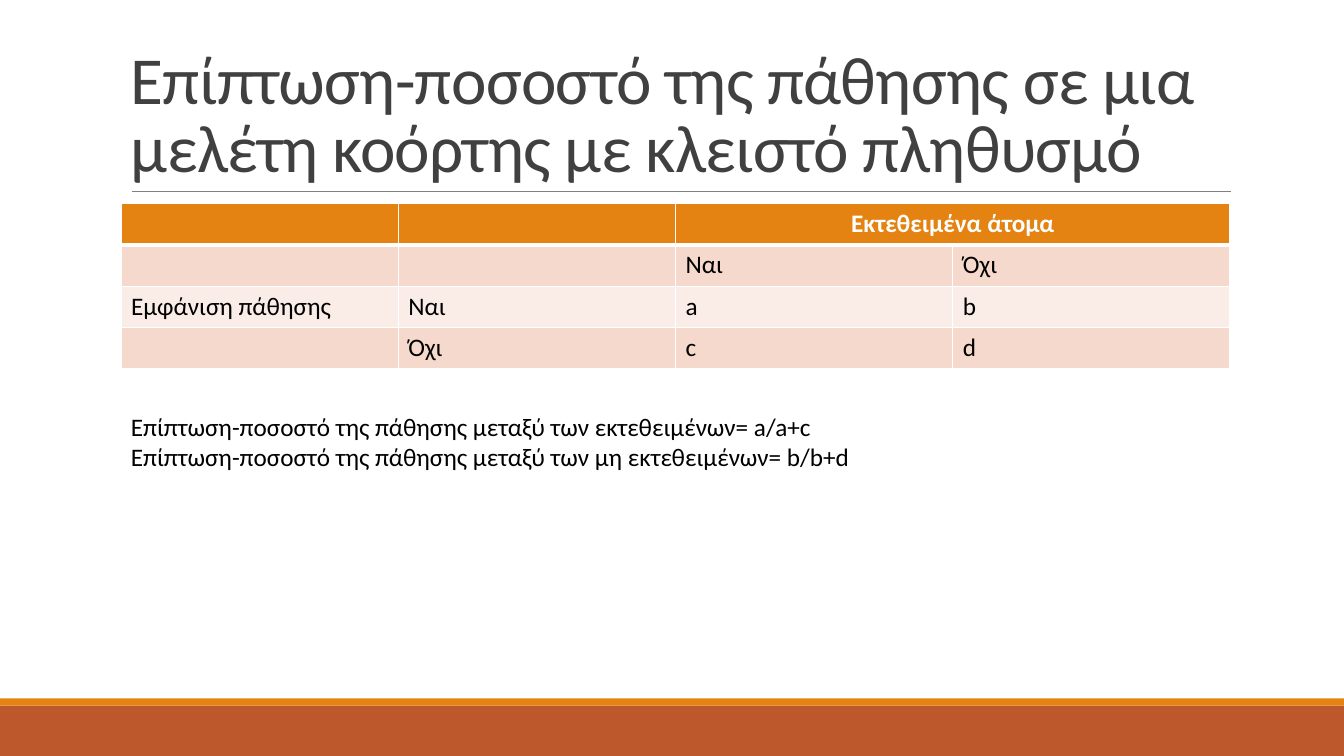
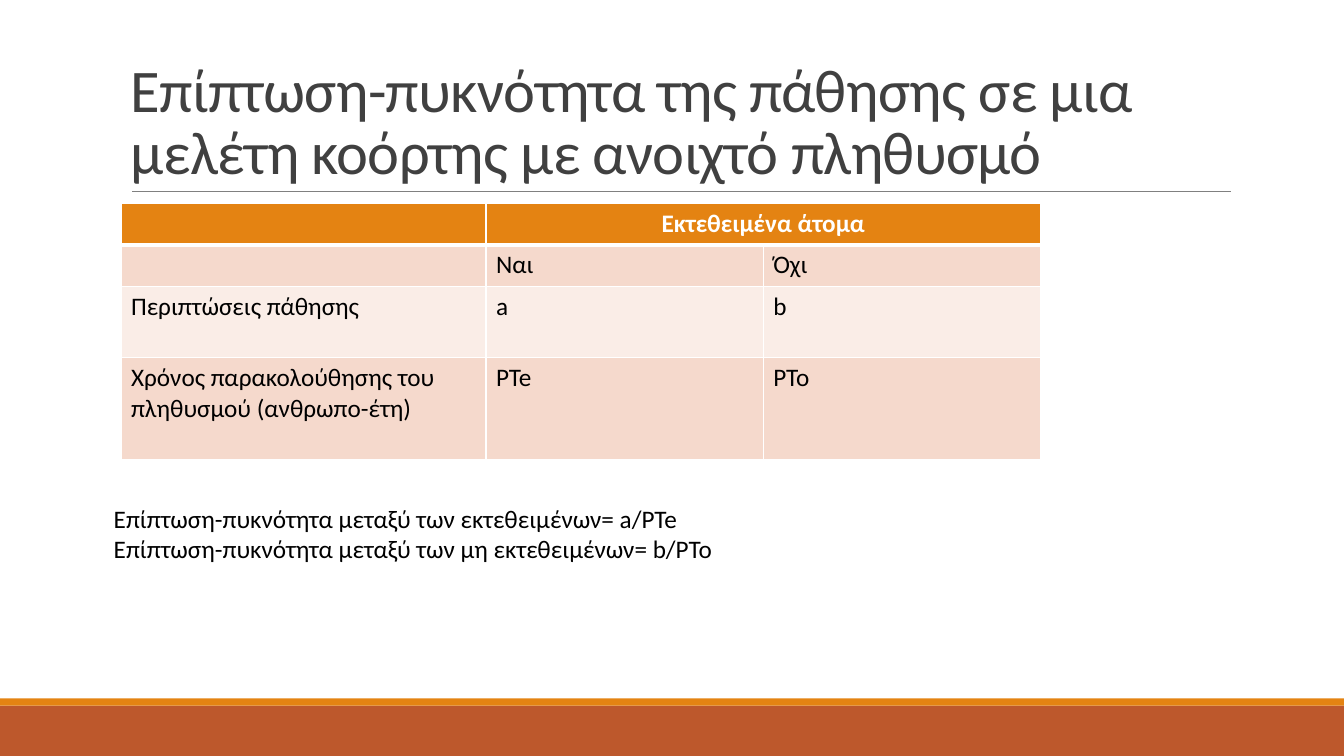
import pptx
import pptx.util
import pptx.dml.color
import pptx.enum.shapes
import pptx.enum.text
from lxml import etree
from pptx.oxml.ns import qn

Inches = pptx.util.Inches
Pt = pptx.util.Pt
RGBColor = pptx.dml.color.RGBColor
PP_ALIGN = pptx.enum.text.PP_ALIGN
MSO_ANCHOR = pptx.enum.text.MSO_ANCHOR

RUST = RGBColor(0xBD, 0x58, 0x2C)
ORANGE = RGBColor(0xE4, 0x83, 0x12)
ROW_DARK = RGBColor(0xF5, 0xD9, 0xCC)
ROW_LIGHT = RGBColor(0xFA, 0xED, 0xE7)
RULE_GREY = RGBColor(0x80, 0x80, 0x80)
TITLE_GREY = RGBColor(0x40, 0x40, 0x40)
BLACK = RGBColor(0, 0, 0)
WHITE = RGBColor(0xFF, 0xFF, 0xFF)

BODY_FORMAT = {"name": "Calibri", "size": Pt(18), "bold": False}
HEADER_FORMAT = {**BODY_FORMAT, "bold": True}
SLIDE_WIDTH = 13.33
TABLE_LEFT, TABLE_TOP = 1.2, 2.02
ROW_HEIGHT = 0.41


def add_run(paragraph, text, font_format, color):
    run = paragraph.add_run()
    run.text = text
    for attribute, value in font_format.items():
        setattr(run.font, attribute, value)
    run.font.color.rgb = color
    return run


def add_text_frame(slide, left, top, width, height):
    frame = slide.shapes.add_textbox(
        Inches(left), Inches(top), Inches(width), Inches(height)).text_frame
    frame.word_wrap = True
    return frame


def add_band(slide, top, height, color):
    band = slide.shapes.add_shape(
        pptx.enum.shapes.MSO_SHAPE.RECTANGLE,
        0, Inches(top), Inches(SLIDE_WIDTH), Inches(height))
    band.shadow.inherit = False
    band.fill.solid()
    band.fill.fore_color.rgb = color
    band.line.fill.background()


def add_title_rule(slide):
    rule = slide.shapes.add_connector(
        pptx.enum.shapes.MSO_CONNECTOR.STRAIGHT,
        Inches(1.31), Inches(1.9), Inches(12.21), Inches(1.9))
    rule.line.color.rgb = RULE_GREY
    rule.line.width = Pt(0.5)
    etree.SubElement(rule._element.spPr, qn("a:effectLst"))


def add_title(slide, text, size):
    frame = add_text_frame(slide, 1.2, 0.31, 11, 1.59)
    frame.vertical_anchor = MSO_ANCHOR.BOTTOM
    paragraph = frame.paragraphs[0]
    paragraph.line_spacing = 0.85
    run = add_run(paragraph, text, {**BODY_FORMAT, "size": Pt(size)}, TITLE_GREY)
    run.font._element.set("spc", "-50")


def add_framed_slide(deck, title, title_size):
    slide = deck.slides.add_slide(deck.slide_layouts[6])
    add_band(slide, 7, 0.5, RUST)
    add_band(slide, 6.93, 0.07, ORANGE)
    add_title_rule(slide)
    add_title(slide, title, title_size)
    return slide


def set_borders(cell, widths):
    properties = cell._tc.get_or_add_tcPr()
    for side, width in widths.items():
        border = etree.SubElement(properties, qn(f"a:ln{side}"), w=str(Pt(width)))
        fill = etree.SubElement(border, qn("a:solidFill"))
        etree.SubElement(fill, qn("a:srgbClr"), val=str(WHITE))


def format_cell(cell, row, text):
    is_header = row == 0
    set_borders(cell, {"L": 1, "R": 1,
                       "T": 3 if row == 1 else 1,
                       "B": 3 if is_header else 1})
    cell.fill.solid()
    cell.fill.fore_color.rgb = (
        ORANGE if is_header else ROW_DARK if row % 2 else ROW_LIGHT)
    if text:
        paragraph = cell.text_frame.paragraphs[0]
        paragraph.alignment = PP_ALIGN.CENTER if is_header else PP_ALIGN.LEFT
        add_run(paragraph, text,
                HEADER_FORMAT if is_header else BODY_FORMAT,
                WHITE if is_header else BLACK)


def add_exposure_table(slide, rows, column_widths, row_heights):
    table = slide.shapes.add_table(
        len(rows), len(column_widths), Inches(TABLE_LEFT), Inches(TABLE_TOP),
        Inches(sum(column_widths)), Inches(sum(row_heights))).table
    for column, width in zip(table.columns, column_widths):
        column.width = Inches(width)
    for table_row, height in zip(table.rows, row_heights):
        table_row.height = Inches(height)
    for row, texts in enumerate(rows):
        for column, text in enumerate(texts):
            format_cell(table.cell(row, column), row, text)
    last = len(column_widths) - 1
    table.cell(0, last - 1).merge(table.cell(0, last))


def add_formulas(slide, left, top, formulas):
    frame = add_text_frame(slide, left, top, 10.8, 1.31)
    for index, formula in enumerate(formulas):
        paragraph = frame.add_paragraph() if index else frame.paragraphs[0]
        add_run(paragraph, formula, BODY_FORMAT, BLACK)


def main():
    deck = pptx.Presentation()
    deck.slide_width = Inches(SLIDE_WIDTH)
    deck.slide_height = Inches(7.5)

    closed = add_framed_slide(
        deck,
        "Επίπτωση-ποσοστό της πάθησης σε μια μελέτη κοόρτης με κλειστό πληθυσμό",
        48)
    add_exposure_table(closed, [
        ["", "", "Εκτεθειμένα άτομα", ""],
        ["", "", "Ναι", "Όχι"],
        ["Εμφάνιση πάθησης", "Ναι", "a", "b"],
        ["", "Όχι", "c", "d"],
    ], [2.75] * 4, [ROW_HEIGHT] * 4)
    add_formulas(closed, 1.2, 4.03, [
        "Επίπτωση-ποσοστό της πάθησης μεταξύ των εκτεθειμένων= a/a+c",
        "Επίπτωση-ποσοστό της πάθησης μεταξύ των μη εκτεθειμένων= b/b+d",
    ])

    open_population = add_framed_slide(
        deck,
        "Επίπτωση-πυκνότητα της πάθησης σε μια μελέτη κοόρτης με ανοιχτό πληθυσμό",
        43.2)
    add_exposure_table(open_population, [
        ["", "Εκτεθειμένα άτομα", ""],
        ["", "Ναι", "Όχι"],
        ["Περιπτώσεις πάθησης", "a", "b"],
        ["Χρόνος παρακολούθησης του πληθυσμού (ανθρωπο-έτη)", "PTe", "PTo"],
    ], [3.62, 2.75, 2.75], [ROW_HEIGHT, ROW_HEIGHT, 0.71, 1.01])
    add_formulas(open_population, 1.03, 4.94, [
        "Επίπτωση-πυκνότητα μεταξύ των εκτεθειμένων= a/PTe",
        "Επίπτωση-πυκνότητα μεταξύ των μη εκτεθειμένων= b/PTo",
    ])

    deck.save("out.pptx")


if __name__ == "__main__":
    main()
